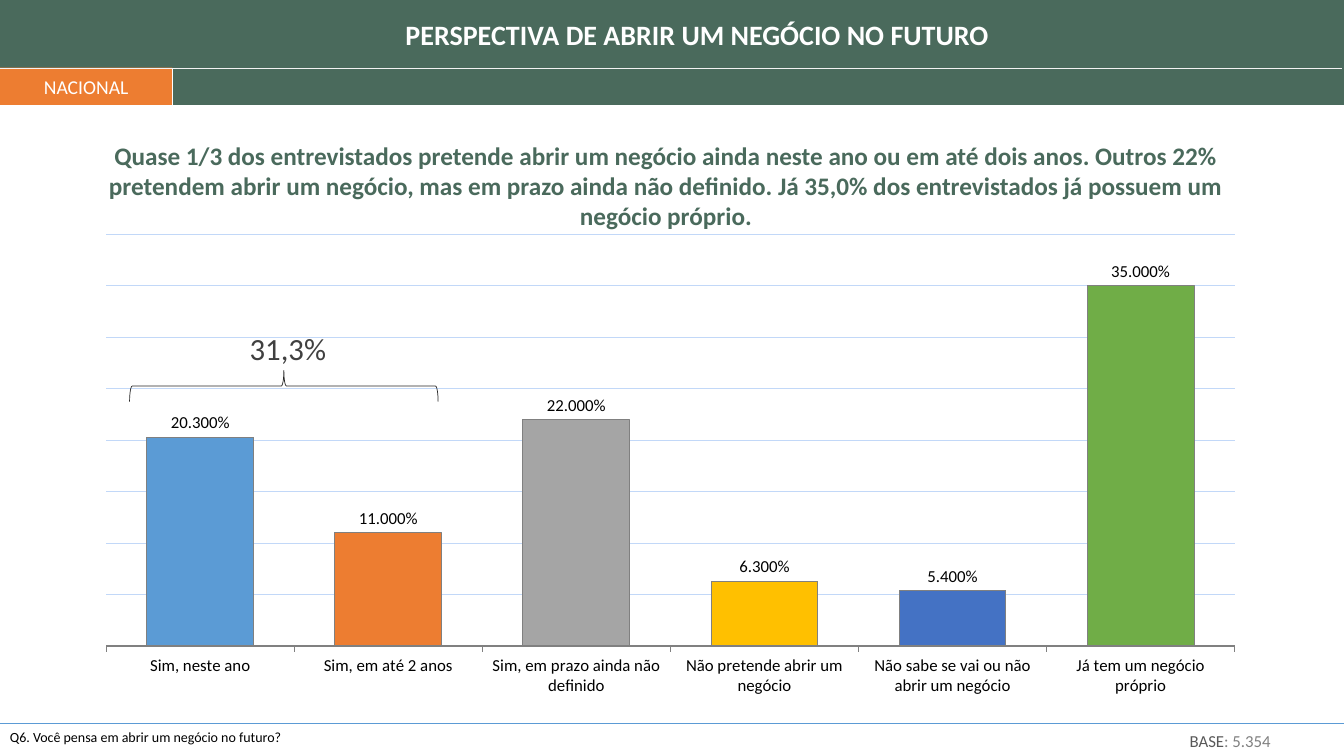
from lxml import etree
from pptx import Presentation
from pptx.chart.data import CategoryChartData
from pptx.dml.color import RGBColor
from pptx.enum.chart import XL_CHART_TYPE, XL_LABEL_POSITION, XL_TICK_MARK
from pptx.enum.shapes import MSO_CONNECTOR, MSO_SHAPE
from pptx.enum.text import MSO_ANCHOR, PP_ALIGN
from pptx.oxml import parse_xml
from pptx.oxml.ns import nsdecls, qn
from pptx.util import Inches, Pt

FONT = "Calibri"
BLACK = RGBColor(0x00, 0x00, 0x00)
WHITE = RGBColor(0xFF, 0xFF, 0xFF)
PALE = RGBColor(0xF2, 0xF2, 0xF2)
GREEN = RGBColor(0x4A, 0x6A, 0x5C)
ORANGE = RGBColor(0xED, 0x7D, 0x31)
BLUE = RGBColor(0x5B, 0x9B, 0xD5)
GRID = RGBColor(0xC2, 0xD8, 0xF8)
GRAY = RGBColor(0x80, 0x80, 0x80)
DARK = RGBColor(0x59, 0x59, 0x59)
CHARCOAL = RGBColor(0x40, 0x40, 0x40)
INK = RGBColor(0x26, 0x26, 0x26)

WIDTH, HEIGHT = 13.33, 7.5
BAND_BOTTOM, TAB_TOP, TAB_WIDTH, FOOTER_TOP = 1.04, 0.67, 1.71, 7.18
PERCENT = "#.#00%"
TITLE = "PERSPECTIVA DE ABRIR UM NEGÓCIO NO FUTURO"
TAB = "NACIONAL"
HEADLINE = (
    "Quase 1/3 dos entrevistados pretende abrir um negócio ainda neste ano ou em até dois anos. "
    "Outros 22% pretendem abrir um negócio, mas em prazo ainda não definido. "
    "Já 35,0% dos entrevistados já possuem um negócio próprio."
)
QUESTION = "Q6. Você pensa em abrir um negócio no futuro?"
BASE = [("BASE", DARK), (": 5.354", GRAY)]
SUBTOTAL = "31,3%"
ANSWERS = [
    ("Sim, neste ano", 0.203, BLUE),
    ("Sim, em até 2 anos", 0.11, ORANGE),
    ("Sim, em prazo ainda não definido", 0.22, RGBColor(0xA5, 0xA5, 0xA5)),
    ("Não pretende abrir um negócio", 0.063, RGBColor(0xFF, 0xC0, 0x00)),
    ("Não sabe se vai ou não abrir um negócio", 0.054, RGBColor(0x44, 0x72, 0xC4)),
    ("Já tem um negócio próprio", 0.35, RGBColor(0x70, 0xAD, 0x47)),
]
CHART_AREA = (0.82, 2.23, 11.66, 4.75)
PLOT_AREA = (1.05, 2.32, 11.19, 4.07)


def write(shape, spans, size, bold=False, align=PP_ALIGN.LEFT):
    """Fill a shape with one paragraph of (text, colour) spans."""
    frame = shape.text_frame
    frame.word_wrap = True
    para = frame.paragraphs[0]
    para.alignment = align
    for text, color in spans:
        span = para.add_run()
        span.text = text
        span.font.name, span.font.size, span.font.bold = FONT, Pt(size), bold
        span.font.color.rgb = color


def add_text(page, area, spans, size, bold=False, align=PP_ALIGN.LEFT):
    """Add a wrapped text box."""
    box = page.shapes.add_textbox(*map(Inches, area))
    write(box, spans, size, bold, align)
    return box


def add_block(page, area, color):
    """Add a plain filled rectangle."""
    block = page.shapes.add_shape(MSO_SHAPE.RECTANGLE, *map(Inches, area))
    block.shadow.inherit = False
    block.fill.solid()
    block.fill.fore_color.rgb = color
    block.line.fill.background()
    return block


def add_rule(page, ends, color, weight):
    """Add a straight line without shadow."""
    rule = page.shapes.add_connector(MSO_CONNECTOR.STRAIGHT, *map(Inches, ends))
    rule.line.color.rgb = color
    rule.line.width = Pt(weight)
    etree.SubElement(rule._element.spPr, qn("a:effectLst"))


def place_plot(chart):
    """Fix the inner plot area inside the chart frame."""
    left, top, width, height = CHART_AREA
    x, y, w, h = PLOT_AREA
    shares = {"x": (x - left) / width, "y": (y - top) / height, "w": w / width, "h": h / height}
    parts = "".join(f'<c:{key} val="{share:.2f}"/>' for key, share in shares.items())
    plot_area = chart._chartSpace.chart.plotArea
    for layout in plot_area.findall(qn("c:layout")):
        plot_area.remove(layout)
    plot_area.insert(0, parse_xml(
        f'<c:layout {nsdecls("c")}><c:manualLayout><c:layoutTarget val="inner"/>'
        f'<c:xMode val="edge"/><c:yMode val="edge"/>{parts}</c:manualLayout></c:layout>'
    ))


def add_answers_chart(page):
    """Add the column chart of answers."""
    data = CategoryChartData(number_format=PERCENT)
    data.categories = [name for name, _, _ in ANSWERS]
    data.add_series("Series 1", [value for _, value, _ in ANSWERS])
    area = map(Inches, CHART_AREA)
    chart = page.shapes.add_chart(XL_CHART_TYPE.COLUMN_CLUSTERED, *area, data).chart
    chart.has_legend = chart.has_title = False
    chart.font.name, chart.font.size = FONT, Pt(18)
    chart.font.color.rgb = BLACK
    place_plot(chart)

    axis = chart.value_axis
    axis.minimum_scale, axis.maximum_scale, axis.major_unit = 0, 0.4, 0.05
    axis.has_major_gridlines = True
    axis.major_gridlines.format.line.color.rgb = GRID
    axis.major_gridlines.format.line.width = Pt(0.75)
    axis.tick_labels.number_format = PERCENT
    axis.tick_labels.number_format_is_linked = False
    axis.visible = False

    names = chart.category_axis
    names.major_tick_mark = XL_TICK_MARK.OUTSIDE
    names.tick_labels.font.size = Pt(12)
    names.format.line.color.rgb = GRAY
    names.format.line.width = Pt(0.75)

    plot = chart.plots[0]
    plot.gap_width = 76
    plot.vary_by_categories = False
    series = plot.series[0]
    for index, (_, _, color) in enumerate(ANSWERS):
        column = series.points[index].format
        column.fill.solid()
        column.fill.fore_color.rgb = color
        column.line.color.rgb = GRAY
        column.line.width = Pt(0.75)
    labels = series.data_labels
    labels.show_value = True
    labels.position = XL_LABEL_POSITION.OUTSIDE_END
    labels.number_format = PERCENT
    labels.number_format_is_linked = False
    labels.font.size = Pt(12)


def main():
    """Build the slide and save the deck."""
    deck = Presentation()
    deck.slide_width, deck.slide_height = Inches(WIDTH), Inches(HEIGHT)
    page = deck.slides.add_slide(deck.slide_layouts[6])

    add_rule(page, (0, FOOTER_TOP, WIDTH, FOOTER_TOP), BLUE, 0.5)
    add_text(page, (0, FOOTER_TOP, WIDTH, 0.27), [(QUESTION, BLACK)], 10)

    add_block(page, (0, 0, WIDTH, BAND_BOTTOM), GREEN)
    title = add_text(page, (0, 0.12, WIDTH, 0.44), [(TITLE, WHITE)], 20, True, PP_ALIGN.CENTER)
    title.text_frame.margin_left = Inches(0.6)
    tab = add_block(page, (0, TAB_TOP, TAB_WIDTH, BAND_BOTTOM - TAB_TOP), ORANGE)
    tab.text_frame.vertical_anchor = MSO_ANCHOR.MIDDLE
    write(tab, [(TAB, WHITE)], 14, align=PP_ALIGN.CENTER)
    add_rule(page, (TAB_WIDTH, BAND_BOTTOM, TAB_WIDTH, TAB_TOP), WHITE, 0.5)
    add_rule(page, (0, 0.68, 13.31, 0.68), PALE, 1)

    add_answers_chart(page)
    add_text(page, (0.8, 1.34, 11.61, 1.01), [(HEADLINE, GREEN)], 18, True, PP_ALIGN.CENTER)

    brace_area = map(Inches, (2.66, 2.3, 0.31, 3.06))
    brace = page.shapes.add_shape(MSO_SHAPE.LEFT_BRACE, *brace_area)
    brace.rotation = 90
    brace.shadow.inherit = False
    brace.fill.background()
    brace.line.color.rgb = INK
    brace.line.width = Pt(0.5)
    add_text(page, (1.8, 3.22, 2.11, 0.47), [(SUBTOTAL, CHARCOAL)], 22, align=PP_ALIGN.CENTER)
    add_text(page, (11.7, 7.2, 1.15, 0.3), BASE, 12)

    deck.save("out.pptx")


if __name__ == "__main__":
    main()
